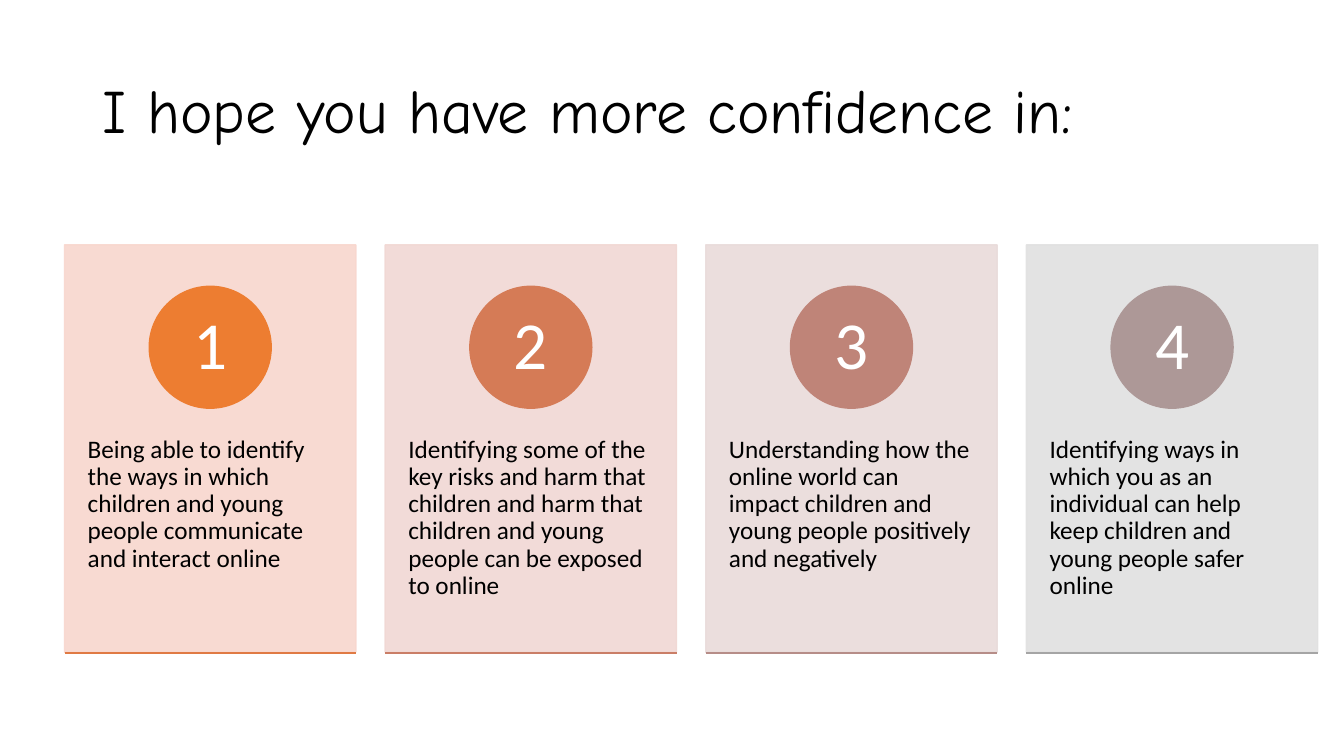
from lxml.etree import SubElement
from pptx import Presentation
from pptx.dml.color import RGBColor
from pptx.enum.shapes import MSO_CONNECTOR, MSO_SHAPE
from pptx.enum.text import MSO_ANCHOR, PP_ALIGN
from pptx.oxml.ns import qn
from pptx.util import Inches, Pt

COLORS = {"black": "000000", "white": "FFFFFF"}

# Text, card colour, circle colour, base line colour
CARDS = [
    ("Being able to identify the ways in which children and young people "
     "communicate and interact online", "F8D7CE", "ED7D31", "E07A44"),
    ("Identifying some of the key risks and harm that children and harm that "
     "children and young people can be exposed to online",
     "F1D8D4", "D57B56", "CA7E67"),
    ("Understanding how the online world can impact children and young people "
     "positively and negatively", "E9DBDA", "BF8478", "B68D88"),
    ("Identifying ways in which you as an individual can help keep children "
     "and young people safer online", "E1E1E1", "AD9897", "A5A5A5"),
]

# Card layout in inches
LEFT, TOP, STEP = 0.64, 2.43, 3.18
CARD_W, CARD_H = 2.89, 4.04
CIRCLE, CIRCLE_TOP = 1.21, 2.84
BASE_Y = 6.48


def write(s, text, size, color, font, align, anchor, insets):
    tf = s.text_frame
    tf.word_wrap = True
    tf.vertical_anchor = anchor
    (tf.margin_left, tf.margin_top,
     tf.margin_right, tf.margin_bottom) = map(Inches, insets)
    p = tf.paragraphs[0]
    p.text = text
    p.alignment = align
    p.line_spacing = 0.9
    p.font.size = Pt(size)
    p.font.name = font
    p.font.color.rgb = RGBColor.from_string(color)


def add_filled(slide, kind, x, y, w, h, color, alpha=100):
    s = slide.shapes.add_shape(kind, Inches(x), Inches(y), Inches(w), Inches(h))
    s.shadow.inherit = False
    s.fill.solid()
    s.line.fill.solid()
    s.line.width = Pt(1)
    for fill in (s.fill, s.line.fill):
        fill.fore_color.rgb = RGBColor.from_string(color)
    if alpha < 100:
        for clr in s._element.spPr.iter(qn("a:srgbClr")):
            SubElement(clr, qn("a:alpha"), val=str(alpha * 1000))
    return s


def add_base_line(slide, x, color):
    line = slide.shapes.add_connector(
        MSO_CONNECTOR.STRAIGHT, Inches(x), Inches(BASE_Y),
        Inches(x + CARD_W), Inches(BASE_Y))
    line.line.width = Pt(1)
    line.line.color.rgb = RGBColor.from_string(color)
    SubElement(line._element.spPr, qn("a:effectLst"))


def add_card(slide, number, text, card_color, circle_color, line_color):
    x = LEFT + STEP * (number - 1)
    card = add_filled(slide, MSO_SHAPE.RECTANGLE, x, TOP, CARD_W, CARD_H,
                      card_color, alpha=90)
    write(card, text, 18, COLORS["black"], "Calibri", PP_ALIGN.LEFT,
          MSO_ANCHOR.TOP, (0.23, 1.9, 0.23, 0.36))
    circle = add_filled(slide, MSO_SHAPE.OVAL, x + (CARD_W - CIRCLE) / 2,
                        CIRCLE_TOP, CIRCLE, CIRCLE, circle_color)
    write(circle, str(number), 48, COLORS["white"], "Calibri", PP_ALIGN.CENTER,
          MSO_ANCHOR.MIDDLE, (0.09, 0.01, 0.09, 0.01))
    add_base_line(slide, x, line_color)


def add_title(slide, text):
    s = slide.shapes.add_textbox(Inches(0.92), Inches(0.4),
                                 Inches(11.5), Inches(1.45))
    write(s, text, 44, COLORS["black"], "Comic Neue", PP_ALIGN.LEFT,
          MSO_ANCHOR.MIDDLE, (0.1, 0.05, 0.1, 0.05))


def main():
    prs = Presentation()
    prs.slide_width, prs.slide_height = Inches(13.33), Inches(7.5)
    slide = prs.slides.add_slide(prs.slide_layouts[6])

    # Heading
    add_title(slide, "I hope you have more confidence in:")

    # Numbered cards
    for number, card in enumerate(CARDS, 1):
        add_card(slide, number, *card)

    prs.save("out.pptx")


if __name__ == "__main__":
    main()
